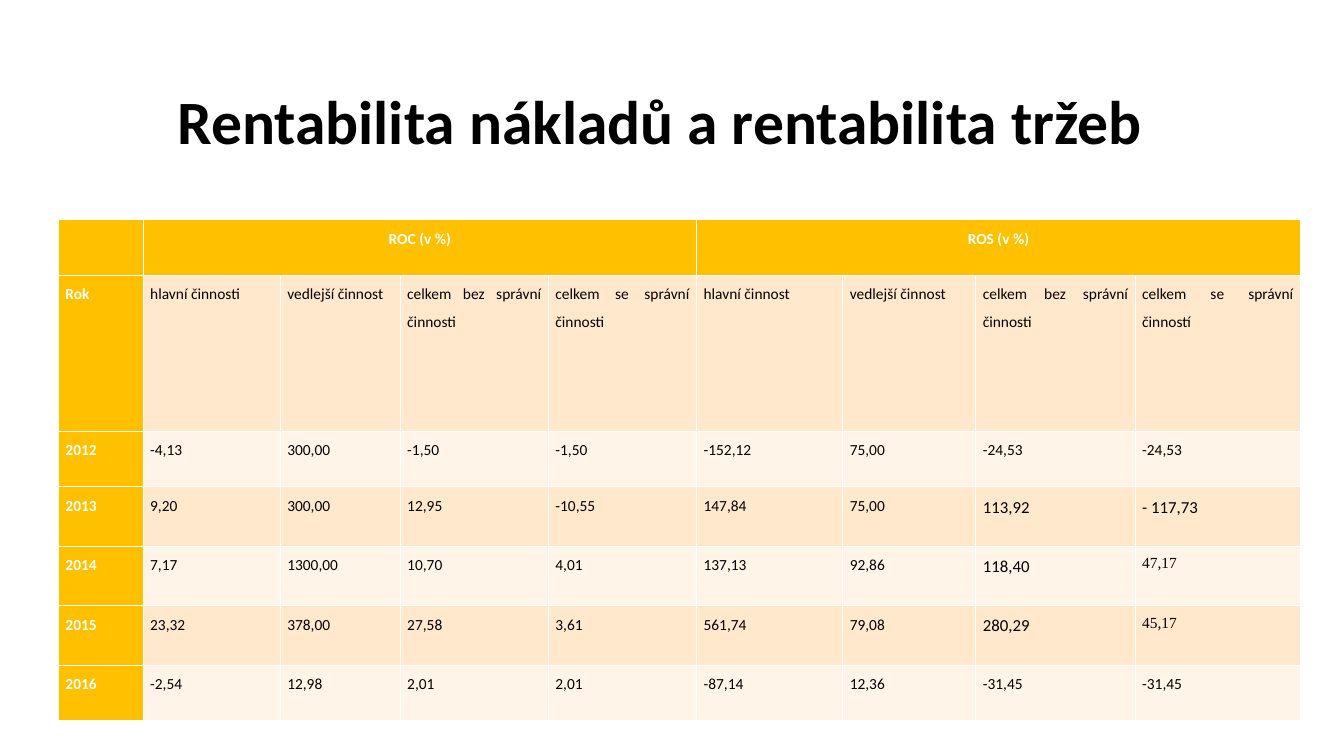
"""Build a slide with a table of cost and sales returns by year."""
import pptx
import pptx.dml.color
import pptx.enum.text
import pptx.util

GOLD = pptx.dml.color.RGBColor(0xFF, 0xC0, 0x00)
PEACH = pptx.dml.color.RGBColor(0xFF, 0xE8, 0xCC)
CREAM = pptx.dml.color.RGBColor(0xFF, 0xF4, 0xE7)
WHITE = pptx.dml.color.RGBColor(0xFF, 0xFF, 0xFF)
BLACK = pptx.dml.color.RGBColor(0x00, 0x00, 0x00)
ALIGN = pptx.enum.text.PP_ALIGN
INCH = pptx.util.Inches

WIDTHS = [0.84, 1.36, 1.19, 1.47, 1.47, 1.45, 1.32, 1.58, 1.64]
HEIGHTS = [0.55, 1.55, 0.55, 0.59, 0.59, 0.59, 0.55]
ROWS = [
    ["", "ROC (v %)", "", "", "", "ROS (v %)", "", "", ""],
    ["Rok", "hlavní činnosti", "vedlejší činnost", "celkem bez správní činnosti",
     "celkem se správní činnosti", "hlavní činnost", "vedlejší činnost",
     "celkem bez správní činnosti", "celkem se správní činností"],
    ["2012", "-4,13", "300,00", "-1,50", "-1,50", "-152,12", "75,00", "-24,53", "-24,53"],
    ["2013", "9,20", "300,00", "12,95", "-10,55", "147,84", "75,00", "113,92", "- 117,73"],
    ["2014", "7,17", "1300,00", "10,70", "4,01", "137,13", "92,86", "118,40", "47,17"],
    ["2015", "23,32", "378,00", "27,58", "3,61", "561,74", "79,08", "280,29", "45,17"],
    ["2016", "-2,54", "12,98", "2,01", "2,01", "-87,14", "12,36", "-31,45", "-31,45"],
]
LARGE = {(3, 7), (3, 8), (4, 7), (5, 7)}
SERIF = {(4, 8), (5, 8)}


def style(par, align, space, font, size, color, bold):
    par.alignment = align
    par.line_spacing = space
    for run in par.runs:
        run.font.name = font
        run.font.size = pptx.util.Pt(size)
        run.font.color.rgb = color
        run.font.bold = bold


deck = pptx.Presentation()
deck.slide_width = INCH(13.33)
deck.slide_height = INCH(7.5)
slide = deck.slides.add_slide(deck.slide_layouts[5])

title = slide.shapes.title
title.left, title.top = INCH(1.61), INCH(0.85)
title.width, title.height = INCH(9.88), INCH(0.77)
frame = title.text_frame
frame.text = "Rentabilita nákladů a rentabilita tržeb"
frame.word_wrap = False
frame.auto_size = pptx.enum.text.MSO_AUTO_SIZE.SHAPE_TO_FIT_TEXT
frame.vertical_anchor = pptx.enum.text.MSO_ANCHOR.MIDDLE
style(frame.paragraphs[0], ALIGN.CENTER, 0.9, "Calibri", 44, BLACK, True)

table = slide.shapes.add_table(
    len(ROWS), len(WIDTHS), INCH(0.58), INCH(2.18),
    INCH(sum(WIDTHS)), INCH(sum(HEIGHTS))).table
table.first_col = True
for col, width in zip(table.columns, WIDTHS):
    col.width = INCH(width)
for row, height in zip(table.rows, HEIGHTS):
    row.height = INCH(height)
for start in (1, 5):
    table.cell(0, start).merge(table.cell(0, start + 3))

for r, texts in enumerate(ROWS):
    for c, text in enumerate(texts):
        cell = table.cell(r, c)
        head = r == 0 or c == 0
        cell.fill.solid()
        cell.fill.fore_color.rgb = GOLD if head else PEACH if r % 2 else CREAM
        cell.margin_left = cell.margin_right = INCH(0.07)
        cell.margin_top = cell.margin_bottom = 0
        if text:
            cell.text_frame.text = text
            style(cell.text_frame.paragraphs[0],
                  ALIGN.CENTER if r == 0 else ALIGN.JUSTIFY, 1.5,
                  "Times New Roman" if (r, c) in SERIF else "Calibri",
                  12 if (r, c) in LARGE else 11,
                  WHITE if head else BLACK, head)

deck.save("out.pptx")
